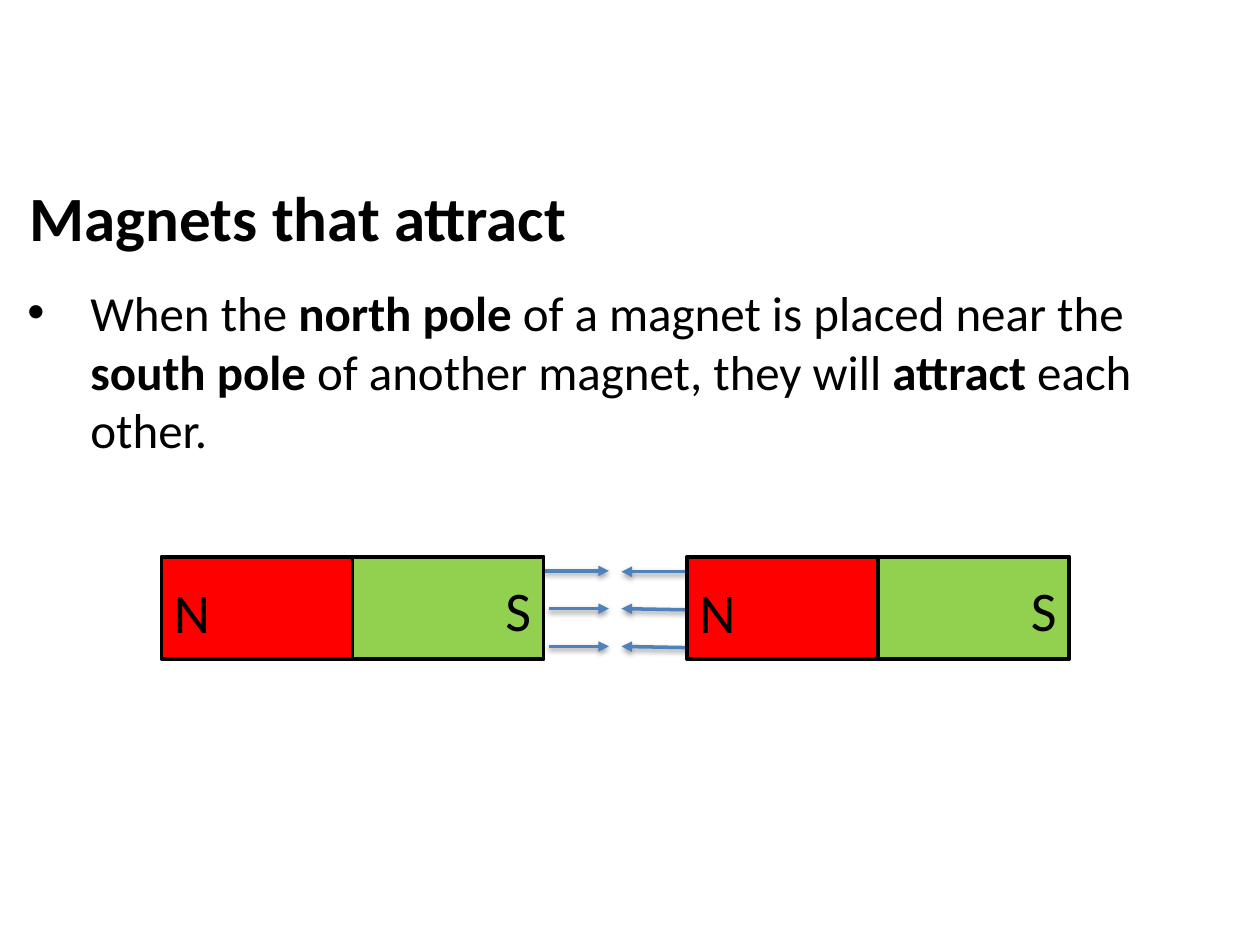
from lxml import etree
from pptx import Presentation
from pptx import util as u
from pptx.dml import color
from pptx.enum import shapes, text
from pptx.oxml import ns

Pt = u.Pt
BLACK, RED, GREEN, BLUE = "000000", "FF0000", "92D050", "4F81BD"


def rgb(code):
    return color.RGBColor.from_string(code)


def add(parent, tag, **attrs):
    node = etree.SubElement(parent, ns.qn(tag))
    for key, val in attrs.items():
        node.set(key, str(val))
    return node


def write(slide, box, runs, size, align=None, bullet=None):
    """Text box with one paragraph of (words, bold) runs."""
    frame = slide.shapes.add_textbox(*map(Pt, box)).text_frame
    frame.word_wrap = True
    para = frame.paragraphs[0]
    if bullet:
        props = para._p.get_or_add_pPr()
        props.set("marL", str(Pt(36)))
        props.set("indent", str(-Pt(36)))
        add(props, "a:buFont", typeface="Arial")
        add(props, "a:buChar", char=bullet)
        para.space_after = Pt(6)
    if align is not None:
        para.alignment = align
    for words, bold in runs:
        run = para.add_run()
        run.text = words
        form = {"name": "Calibri", "size": Pt(size), "bold": bold}
        for key, val in form.items():
            setattr(run.font, key, val)
        run.font.color.rgb = rgb(BLACK)


def arrow(slide, start, end):
    """Blue arrow with a soft shadow below it."""
    line = slide.shapes.add_connector(
        shapes.MSO_CONNECTOR.STRAIGHT, *map(Pt, (*start, *end)))
    line.line.color.rgb = rgb(BLUE)
    line.line.width = Pt(2)
    add(line.line._ln, "a:tailEnd", type="triangle")
    glow = add(add(line._element.spPr, "a:effectLst"), "a:outerShdw",
               blurRad=Pt(3.1), dist=Pt(1.6), dir=5400000, rotWithShape=0)
    add(add(glow, "a:srgbClr", val=BLACK), "a:alpha", val=38000)


def field(slide, box):
    """Three pairs of arrows that point at each other."""
    left, top, width, height = box
    mid = left + width / 2
    # Start offsets from the left edge and drops of the right-hand tails
    rows = [(0, 0.5, 0.5, -2), (3, 0, 0.7, 0), (3, 0, 0.7, 0)]
    for i, (gap, shift, drop, tuck) in enumerate(rows):
        y = top + i * height / 2
        arrow(slide, (left + gap, y), (mid - 3.6, y))
        tip = y + shift
        arrow(slide, (left + width + 2 + tuck, y + drop), (mid + 3.6, tip))


def magnet(slide, box):
    """Bar magnet: red body, green south half, pole letters."""
    left, top, width, height = box
    half, label = width / 2, 54.7
    for x, wide, fill in ((left, width, RED), (left + half, half, GREEN)):
        bar = slide.shapes.add_shape(
            shapes.MSO_SHAPE.RECTANGLE, *map(Pt, (x, top, wide, height)))
        bar.shadow.inherit = False
        bar.fill.solid()
        bar.fill.fore_color.rgb = rgb(fill)
        bar.line.color.rgb = rgb(BLACK)
        bar.line.width = Pt(2)
    write(slide, (left, top + 8, label, 46), [("N", False)], 32)
    write(slide, (left + width - label, top + 7.3, label, 46),
          [("S", False)], 32, text.PP_ALIGN.RIGHT)


def main():
    deck = Presentation()
    deck.slide_width, deck.slide_height = Pt(720), Pt(540)
    slide = deck.slides.add_slide(deck.slide_layouts[6])

    # Heading and rule
    write(slide, (10, 98.6, 606, 51), [("Magnets that attract", True)], 36)
    write(slide, (8.6, 157.7, 686, 109), [
        ("When the ", False), ("north pole ", True),
        ("of a magnet is placed near the ", False), ("south pole ", True),
        ("of another magnet, they will ", False), ("attract", True),
        (" each other.", False)], 28, bullet="•")

    # Two magnets, with the arrows behind them
    top, width, height, first, second = 318.2, 218.3, 58.4, 92.3, 392.5
    edge = first + width
    field(slide, (edge, top + 8, second - edge, 43.2))
    for left in (first, second):
        magnet(slide, (left, top, width, height))

    deck.save("out.pptx")


if __name__ == "__main__":
    main()
